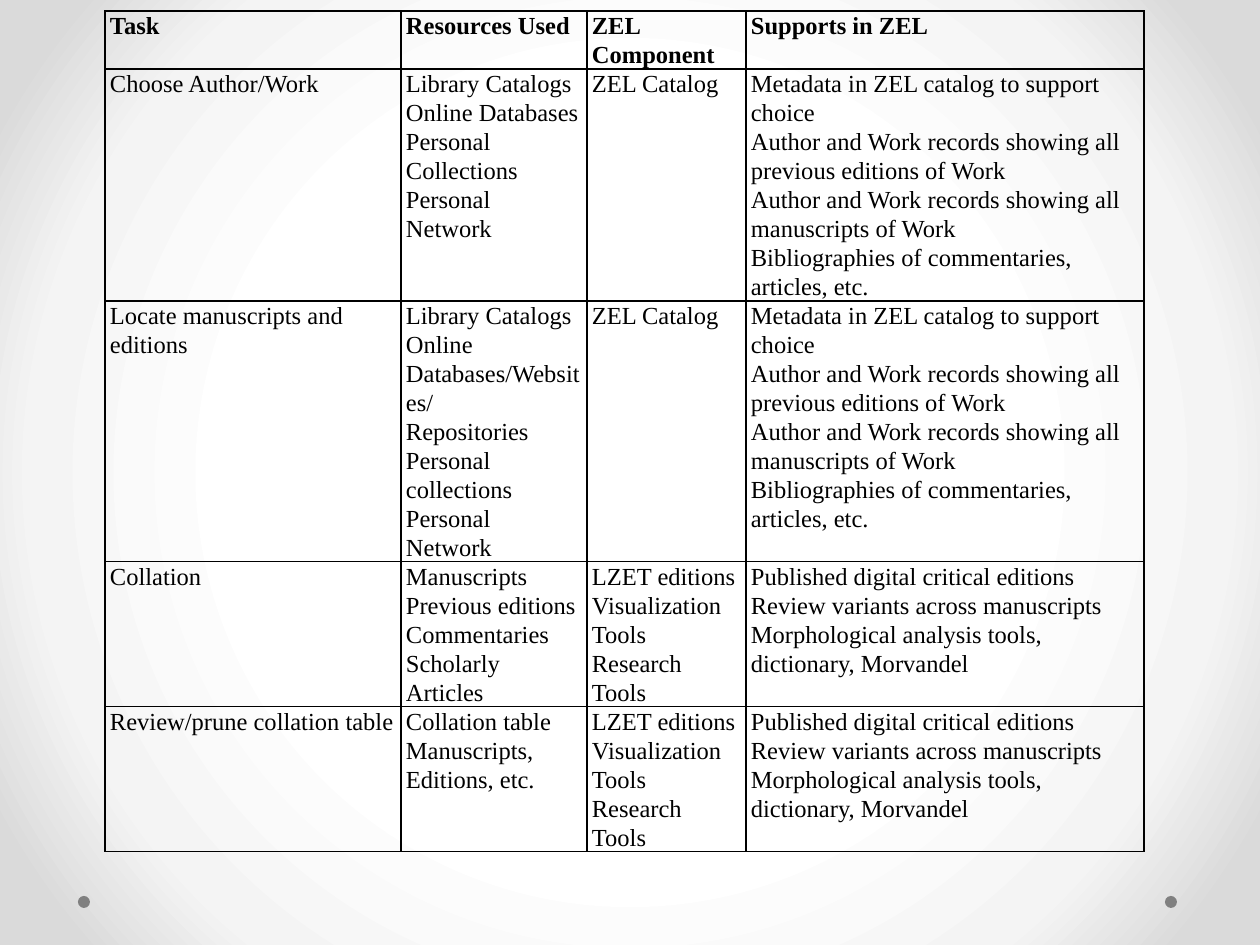
from lxml import etree
from pptx import Presentation
from pptx import oxml
from pptx import util as u
from pptx.dml.color import RGBColor
from pptx.enum import shapes
from pptx.oxml.ns import nsdecls, qn

BLACK = RGBColor(0, 0, 0)
GRAY = RGBColor(0x80, 0x80, 0x80)
FONT = "Times New Roman"
BACKGROUND_STOPS = [(50, "FFFFFF"), (76, "F4F4F4"), (92, "DADADA")]

COLUMN_WIDTHS = [296, 186, 159, 398]
ROW_HEIGHTS = [58, 232, 260, 145, 145]

CATALOG_SUPPORTS = [
    "Metadata in ZEL catalog to support choice",
    "Author and Work records showing all previous editions of Work",
    "Author and Work records showing all manuscripts of Work",
    "Bibliographies of commentaries, articles, etc.",
]
EDITION_TOOLS = ["LZET editions", "Visualization Tools", "Research Tools"]
EDITION_SUPPORTS = [
    "Published digital critical editions",
    "Review variants across manuscripts",
    "Morphological analysis tools, dictionary, Morvandel",
]
ROWS = [
    [["Task"], ["Resources Used"], ["ZEL Component"], ["Supports in ZEL"]],
    [["Choose Author/Work"],
     ["Library Catalogs", "Online Databases", "Personal Collections",
      "Personal Network"],
     ["ZEL Catalog"], CATALOG_SUPPORTS],
    [["Locate manuscripts and editions"],
     ["Library Catalogs", "Online Databases/Websites/", "Repositories",
      "Personal collections", "Personal Network"],
     ["ZEL Catalog"], CATALOG_SUPPORTS],
    [["Collation"],
     ["Manuscripts", "Previous editions", "Commentaries", "Scholarly Articles"],
     EDITION_TOOLS, EDITION_SUPPORTS],
    [["Review/prune collation table"],
     ["Collation table", "Manuscripts, Editions, etc."],
     EDITION_TOOLS, EDITION_SUPPORTS],
]


def px(n):
    return u.Emu(round(n * 914400 / 126))


def set_background(s):
    """Fill the slide with a radial gradient spreading from its centre."""
    stops = "".join(
        f'<a:gs pos="{pos * 1000}"><a:srgbClr val="{color}"/></a:gs>'
        for pos, color in BACKGROUND_STOPS)
    bg = oxml.parse_xml(
        f'<p:bg {nsdecls("p", "a")}><p:bgPr><a:gradFill rotWithShape="1">'
        f'<a:gsLst>{stops}</a:gsLst><a:path path="circle">'
        '<a:fillToRect l="50000" t="50000" r="50000" b="50000"/></a:path>'
        '</a:gradFill><a:effectLst/></p:bgPr></p:bg>')
    s._element.cSld.insert(0, bg)


def add_dot(s, left, top, size):
    sp = s.shapes.add_shape(shapes.MSO_SHAPE.OVAL,
                            px(left), px(top), px(size), px(size))
    sp.shadow.inherit = False
    sp.fill.solid()
    sp.fill.fore_color.rgb = GRAY
    sp.line.fill.background()


def set_borders(cell):
    tc_pr = cell._tc.get_or_add_tcPr()
    for i, side in enumerate(("lnL", "lnR", "lnT", "lnB")):
        ln = etree.Element(qn(f"a:{side}"), w=str(u.Pt(1)))
        fill = etree.SubElement(ln, qn("a:solidFill"))
        etree.SubElement(fill, qn("a:srgbClr"), val=str(BLACK))
        tc_pr.insert(i, ln)


def fill_cell(cell, lines, bold):
    cell.fill.background()
    set_borders(cell)
    cell.margin_left = cell.margin_right = px(5)
    cell.margin_top = cell.margin_bottom = 0
    tf = cell.text_frame
    tf.text = "\n".join(lines)
    for p in tf.paragraphs:
        p.line_spacing = 1.07
        font = p.runs[0].font
        font.name, font.size, font.bold = FONT, u.Pt(14), bold
        font.color.rgb = BLACK


def add_task_table(s, left, top):
    table = s.shapes.add_table(
        len(ROWS), len(COLUMN_WIDTHS), px(left), px(top),
        px(sum(COLUMN_WIDTHS)), px(sum(ROW_HEIGHTS))).table
    table.first_row = table.horz_banding = False
    for column, width in zip(table.columns, COLUMN_WIDTHS):
        column.width = px(width)
    for r, (row, height) in enumerate(zip(ROWS, ROW_HEIGHTS)):
        table.rows[r].height = px(height)
        for c, lines in enumerate(row):
            fill_cell(table.cell(r, c), lines, bold=r == 0)


def main():
    prs = Presentation()
    prs.slide_width, prs.slide_height = px(1260), px(945)
    s = prs.slides.add_slide(prs.slide_layouts[6])
    set_background(s)
    for left in (1165, 78):
        add_dot(s, left, 896, 12)
    add_task_table(s, 105, 11)
    prs.save("out.pptx")


if __name__ == "__main__":
    main()
